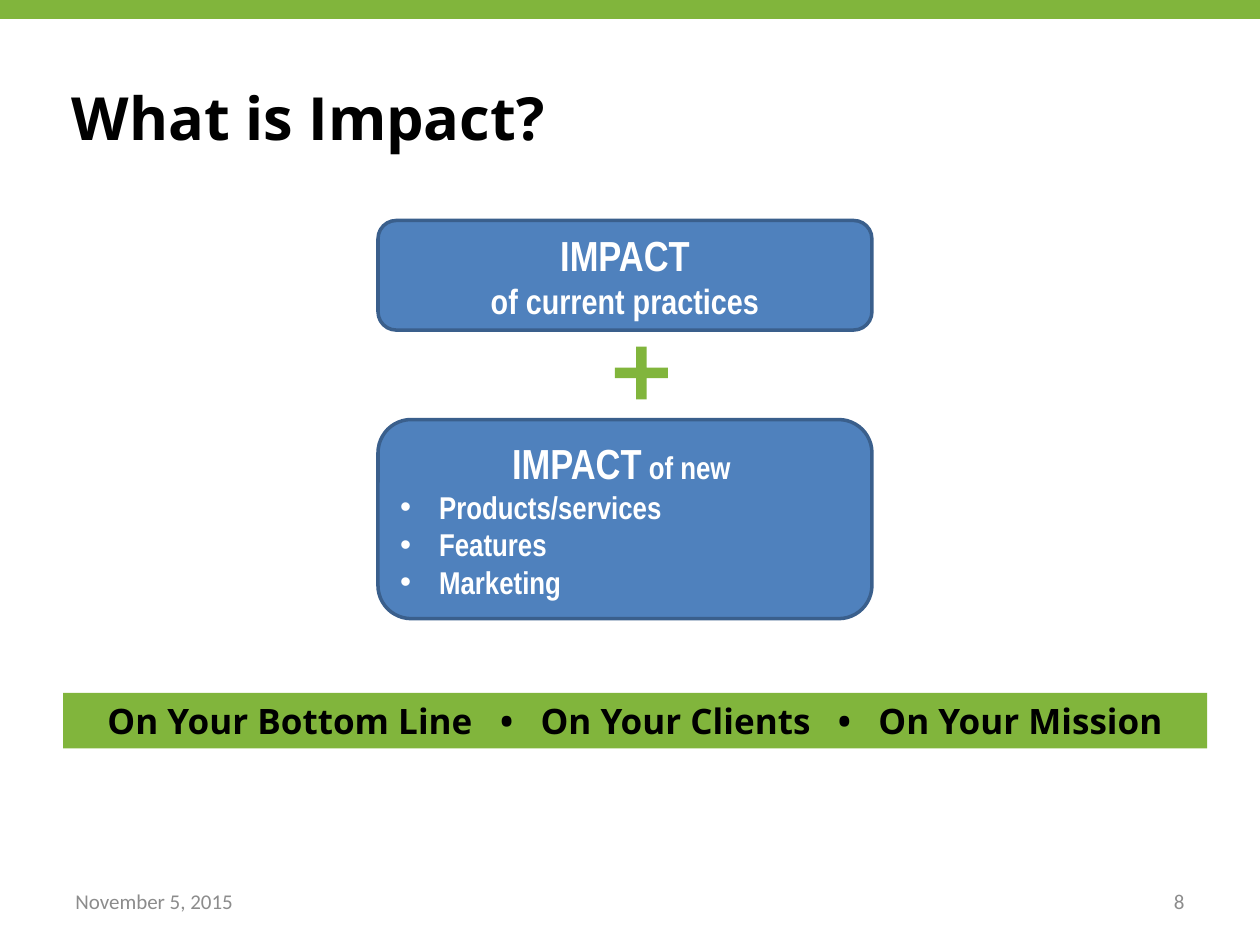
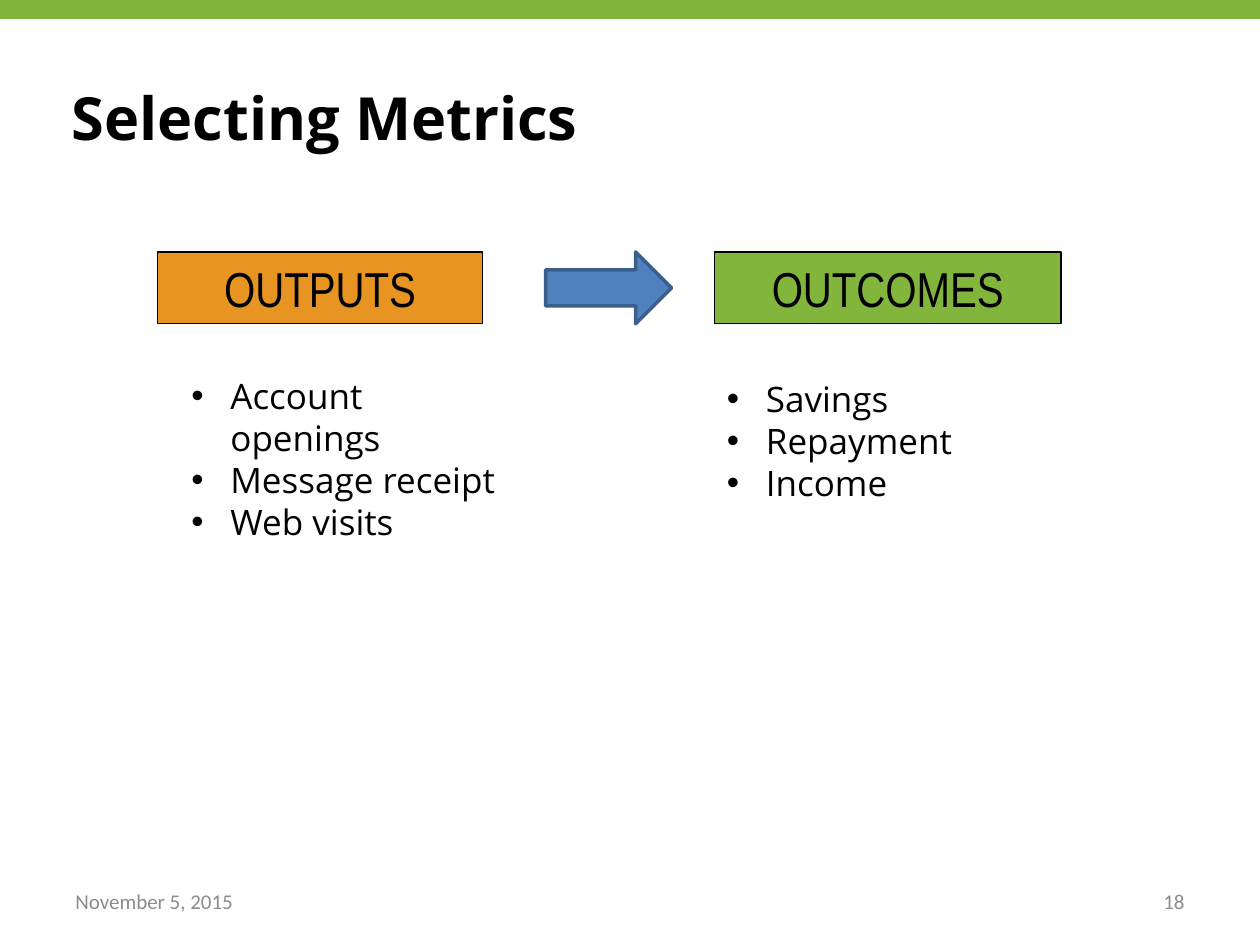
from lxml import etree
from pptx import Presentation
from pptx.dml.color import RGBColor
from pptx.enum.shapes import MSO_SHAPE
from pptx.enum.text import MSO_ANCHOR, PP_ALIGN
from pptx.oxml.ns import qn
from pptx.util import Inches, Pt

RECTANGLE = MSO_SHAPE.RECTANGLE
ROUNDED = MSO_SHAPE.ROUNDED_RECTANGLE
PLUS = MSO_SHAPE.CROSS
ARROW = MSO_SHAPE.RIGHT_ARROW
TOP, MIDDLE = MSO_ANCHOR.TOP, MSO_ANCHOR.MIDDLE
LEFT, CENTER, RIGHT = PP_ALIGN.LEFT, PP_ALIGN.CENTER, PP_ALIGN.RIGHT

BLACK = RGBColor(0x00, 0x00, 0x00)
WHITE = RGBColor(0xFF, 0xFF, 0xFF)
GRAY = RGBColor(0x8C, 0x8C, 0x8C)
GREEN = RGBColor(0x81, 0xB5, 0x3C)
ORANGE = RGBColor(0xE8, 0x94, 0x23)
BLUE = RGBColor(0x4F, 0x81, 0xBD)
DARK_BLUE = RGBColor(0x3A, 0x5F, 0x8C)

BODY_FONT = "Open Sans"
LABEL_FONT = "Arial Narrow"
FOOTER_FONT = "Calibri"
DATE = "November 5, 2015"
HANGING = Inches(0.31)


def format_span(span, size, font, color, bold=False):
    """Set the look of one run."""
    span.font.size = Pt(size)
    span.font.name = font
    span.font.bold = bold
    span.font.color.rgb = color


def add_bullet(para):
    """Give a paragraph a round bullet with a hanging indent."""
    properties = para._p.get_or_add_pPr()
    properties.set("marL", str(HANGING))
    properties.set("indent", str(-HANGING))
    etree.SubElement(properties, qn("a:buFont")).set("typeface", "Arial")
    etree.SubElement(properties, qn("a:buChar")).set("char", "•")


def write(box, lines, font, color, bold=False, align=LEFT, anchor=TOP, bullets_from=None):
    """Fill a box with lines, each a list of (text, size) spans."""
    frame = box.text_frame
    frame.word_wrap = True
    frame.vertical_anchor = anchor
    for index, spans in enumerate(lines):
        para = frame.add_paragraph() if index else frame.paragraphs[0]
        bulleted = bullets_from is not None and index >= bullets_from
        para.alignment = LEFT if bulleted else align
        if bulleted:
            add_bullet(para)
        for text, size in spans:
            span = para.add_run()
            span.text = text
            format_span(span, size, font, color, bold)


def add_figure(page, kind, place, fill, line=None, width=0):
    """Add a flat preset shape."""
    figure = page.shapes.add_shape(kind, *map(Inches, place))
    figure.shadow.inherit = False
    figure.fill.solid()
    figure.fill.fore_color.rgb = fill
    if line is None:
        figure.line.fill.background()
    else:
        figure.line.color.rgb = line
        figure.line.width = Pt(width)
    return figure


def add_text(page, place, lines, font, color, **style):
    """Add a text box."""
    box = page.shapes.add_textbox(*map(Inches, place))
    write(box, lines, font, color, **style)


def add_page(deck, title, number):
    """Add a slide with the top band, title, date and number."""
    page = deck.slides.add_slide(deck.slide_layouts[5])
    add_figure(page, RECTANGLE, (0, 0, 10, 0.15), GREEN)
    heading = page.shapes.title
    heading.left, heading.top, heading.width, heading.height = map(Inches, (0.5, 0.3, 9, 1.25))
    frame = heading.text_frame
    frame.margin_left = frame.margin_right = Inches(0.07)
    frame.margin_top = frame.margin_bottom = Inches(0.04)
    write(heading, [[(title, 34)]], BODY_FONT, BLACK, bold=True, anchor=MIDDLE)
    for left, text, align in ((0.5, DATE, LEFT), (7.17, str(number), RIGHT)):
        add_text(page, (left, 6.95, 2.33, 0.4), [[(text, 12)]], FOOTER_FONT, GRAY,
                 align=align, anchor=MIDDLE)
    return page


def add_impact_box(page, top, height, lines, bullets_from=None):
    """Add a rounded blue box with white text."""
    box = add_figure(page, ROUNDED, (3, top, 3.92, height), BLUE, DARK_BLUE, 2)
    write(box, lines, LABEL_FONT, WHITE, bold=True, align=CENTER, anchor=MIDDLE,
          bullets_from=bullets_from)


def add_slogan(page, phrases):
    """Add the green strip of phrases parted by widely spaced dots."""
    strip = add_figure(page, RECTANGLE, (0.5, 5.5, 9.08, 0.44), GREEN)
    spans = [(phrases[0], 20)]
    for phrase in phrases[1:]:
        spans += [(" •", 20), (" " + phrase, 20)]
    write(strip, [spans], BODY_FONT, BLACK, bold=True, align=CENTER)
    for dot in strip.text_frame.paragraphs[0].runs[1::2]:
        dot._r.get_or_add_rPr().set("spc", "1040")


def add_metric(page, left, width, fill, label, list_place, items):
    """Add a metric label and its bulleted examples."""
    box = add_figure(page, RECTANGLE, (left, 2, width, 0.57), fill, BLACK, 0.75)
    write(box, [[(label, 28)]], LABEL_FONT, BLACK, align=CENTER)
    add_text(page, list_place, [[(item, 20)] for item in items], BODY_FONT, BLACK,
             bullets_from=0)


def build_impact(deck):
    """Build the slide that defines impact."""
    page = add_page(deck, "What is Impact?", 8)
    add_impact_box(page, 1.75, 0.87, [[("IMPACT", 24)], [("of current practices", 20)]])
    items = ("Products/services", "Features", "Marketing")
    add_impact_box(page, 3.33, 1.58,
                   [[("IMPACT", 24), (" of new ", 18)]] + [[(item, 18)] for item in items],
                   bullets_from=1)
    plus = add_figure(page, PLUS, (4.88, 2.75, 0.42, 0.42), GREEN)
    plus.adjustments[0] = 0.4
    add_slogan(page, ("On Your Bottom Line", "On Your Clients", "On Your Mission"))


def build_metrics(deck):
    """Build the slide that leads from outputs to outcomes."""
    page = add_page(deck, "Selecting Metrics", 18)
    add_metric(page, 1.25, 2.58, ORANGE, "OUTPUTS", (1.42, 2.92, 2.75, 1.45),
               ("Account openings", "Message receipt", "Web visits"))
    add_metric(page, 5.67, 2.75, GREEN, "OUTCOMES", (5.67, 2.95, 2.75, 1.11),
               ("Savings", "Repayment", "Income"))
    add_figure(page, ARROW, (4.33, 2, 1, 0.57), BLUE, DARK_BLUE, 2)


def main():
    """Build and save the deck."""
    deck = Presentation()
    deck.slide_width, deck.slide_height = Inches(10), Inches(7.5)
    build_impact(deck)
    build_metrics(deck)
    deck.save("out.pptx")


if __name__ == "__main__":
    main()
